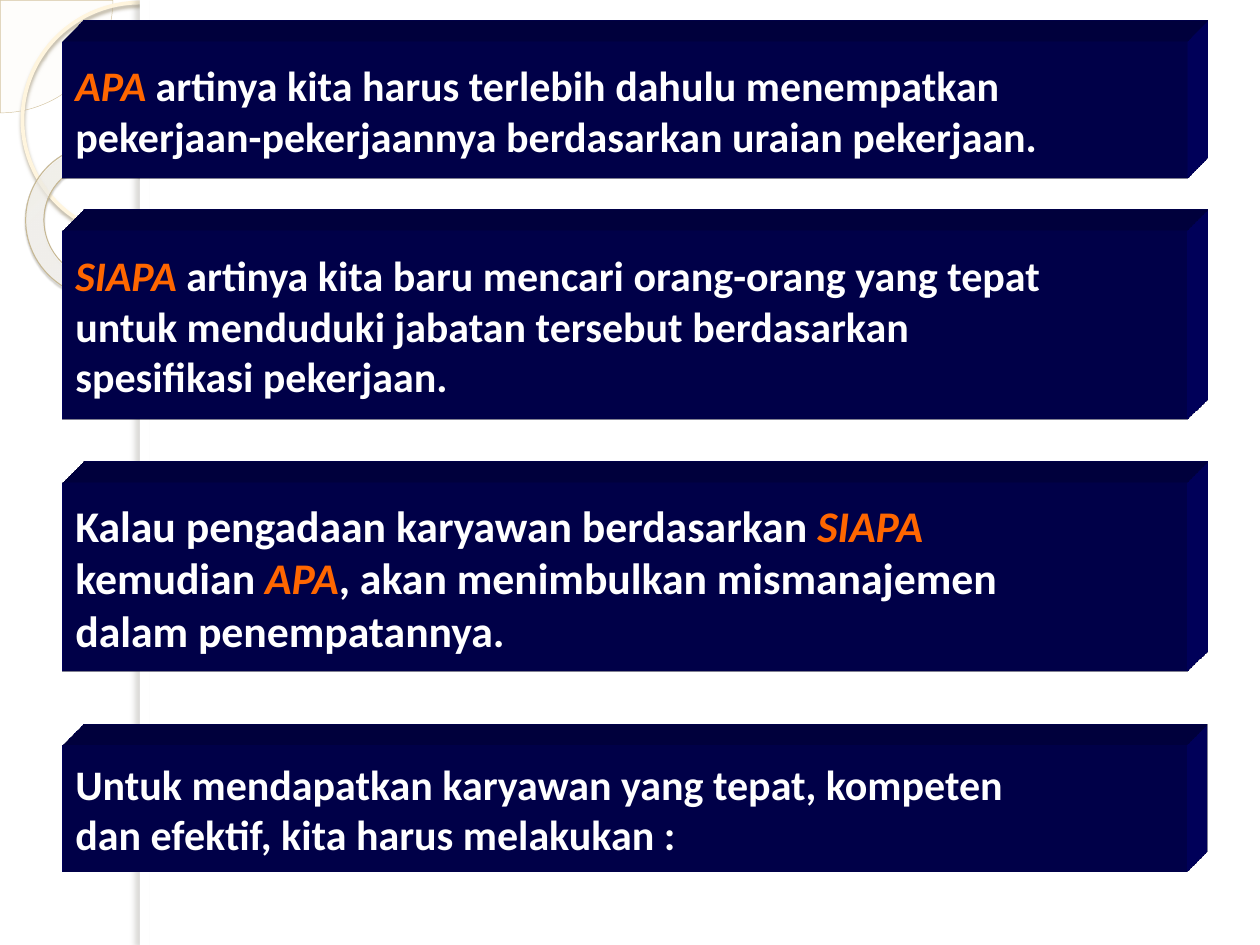
from dataclasses import dataclass
from typing import Optional

from pptx import Presentation
from pptx.dml.color import RGBColor
from pptx.enum.shapes import MSO_SHAPE
from pptx.enum.text import MSO_ANCHOR, PP_ALIGN
from pptx.oxml import parse_xml
from pptx.oxml.ns import nsdecls, qn
from pptx.util import Pt

RECT = MSO_SHAPE.RECTANGLE
OVAL = MSO_SHAPE.OVAL
DONUT = MSO_SHAPE.DONUT
PIE = MSO_SHAPE.PIE
MIDDLE = MSO_ANCHOR.MIDDLE
LEFT = PP_ALIGN.LEFT

WHITE = RGBColor(0xFF, 0xFF, 0xFF)
NAVY = RGBColor(0x00, 0x00, 0x66)
ORANGE = RGBColor(0xFF, 0x66, 0x00)
CREAM = RGBColor(0xFE, 0xFA, 0xF4)
SAND = RGBColor(0xD3, 0xC3, 0x9F)
PALE = RGBColor(0xFF, 0xF5, 0xDE)
TAN = RGBColor(0xC7, 0xB8, 0x93)
SHADE = RGBColor(0xB0, 0xA6, 0x8F)
DARK = RGBColor(0x5A, 0x54, 0x44)
GREY = RGBColor(0x73, 0x6F, 0x63)
STOPS = (
    (0, RGBColor(0xFF, 0xFC, 0xF6), 70),
    (70, RGBColor(0xFF, 0xFE, 0xFB), 55),
    (100, RGBColor(0xF0, 0xD2, 0x8E), 60),
)
FONT = "Calibri"
KEYS = ("SIAPA", "APA")


@dataclass(frozen=True)
class Shadow:
    """Outer shadow with lengths in points."""
    color: RGBColor
    alpha: int
    blur: float
    dist: float
    angle: int


@dataclass(frozen=True)
class Decor:
    """One ornament at the left edge, in points."""
    kind: int
    box: tuple
    fill: Optional[RGBColor] = None
    alpha: int = 100
    line: Optional[RGBColor] = None
    width: float = 0
    shadow: Optional[Shadow] = None
    adjust: tuple = ()
    turn: float = 0
    stops: tuple = ()


@dataclass(frozen=True)
class Panel:
    """One raised bar of text, in points."""
    top: float
    height: float
    lines: tuple
    size: float = 24


DECOR = (
    Decor(PIE, (-64, -64, 128.5, 128.5), CREAM, 33, SAND, 0.25, adjust=(0, 54.02)),
    Decor(OVAL, (12.8, 1.5, 134, 134), line=PALE, width=2.15,
          shadow=Shadow(SHADE, 85, 2, 2, 90)),
    Decor(DONUT, (14.4, 83, 88.5, 87), line=TAN, width=0.58, adjust=(0.12,),
          turn=38.6, stops=STOPS, shadow=Shadow(DARK, 35, 1, 1.2, 75)),
    Decor(RECT, (80, 0, 640, 540), WHITE),
    Decor(RECT, (80, 0, 5.5, 540), WHITE, shadow=Shadow(GREY, 25, 3, 3, 180)),
)

PANELS = (
    Panel(24, 78, ("APA artinya kita harus terlebih dahulu menempatkan",
                   "pekerjaan-pekerjaannya berdasarkan uraian pekerjaan.")),
    Panel(132, 108, ("SIAPA artinya kita baru mencari orang-orang yang tepat",
                     "untuk menduduki jabatan tersebut berdasarkan",
                     "spesifikasi pekerjaan.")),
    Panel(276, 108, ("Kalau pengadaan karyawan berdasarkan SIAPA",
                     "kemudian APA, akan menimbulkan mismanajemen",
                     "dalam penempatannya."), 25),
    Panel(426, 72, ("Untuk mendapatkan karyawan yang tepat, kompeten",
                    "dan efektif, kita harus melakukan :")),
)


def tint(color: RGBColor, alpha: int) -> str:
    """Return a colour with opacity as XML."""
    return f'<a:srgbClr val="{color}"><a:alpha val="{alpha * 1000}"/></a:srgbClr>'


def node(xml: str):
    """Build a drawing element, adding the namespace to its root tag."""
    tag, rest = xml.split(" ", 1)
    return parse_xml(f"{tag} {nsdecls('a')} {rest}")


def cast(shape, shade: Shadow) -> None:
    """Give a shape an outer shadow."""
    effects = shape._element.spPr.find(qn("a:effectLst"))
    effects.append(node(
        f'<a:outerShdw blurRad="{Pt(shade.blur)}" dist="{Pt(shade.dist)}" '
        f'dir="{shade.angle * 60000}" algn="tl" rotWithShape="0">'
        f'{tint(shade.color, shade.alpha)}</a:outerShdw>'))


def blend(shape, stops: tuple) -> None:
    """Fill a shape with a round gradient."""
    shape.fill.gradient()
    props = shape._element.spPr
    parts = "".join(f'<a:gs pos="{pos * 1000}">{tint(color, alpha)}</a:gs>'
                    for pos, color, alpha in stops)
    props.replace(props.find(qn("a:gradFill")), node(
        f'<a:gradFill rotWithShape="1"><a:gsLst>{parts}</a:gsLst><a:path path="circle">'
        '<a:fillToRect l="-408000" t="-50000" r="508000" b="150000"/>'
        '</a:path></a:gradFill>'))


def extrude(shape, color: RGBColor) -> None:
    """Raise a shape into an oblique block."""
    props = shape._element.spPr
    props.append(node(
        '<a:scene3d ><a:camera prst="legacyObliqueTopRight"/>'
        '<a:lightRig rig="legacyFlat3" dir="b"/></a:scene3d>'))
    props.append(node(
        '<a:sp3d extrusionH="430200" prstMaterial="legacyMatte">'
        '<a:bevelT w="13500" h="13500" prst="angle"/>'
        '<a:bevelB w="13500" h="13500" prst="angle"/>'
        f'<a:extrusionClr><a:srgbClr val="{color}"/></a:extrusionClr></a:sp3d>'))


def draw(slide, item: Decor):
    """Draw one shape."""
    shape = slide.shapes.add_shape(item.kind, *map(Pt, item.box))
    shape.shadow.inherit = False
    shape.rotation = item.turn
    for index, value in enumerate(item.adjust):
        shape.adjustments[index] = value
    if item.stops:
        blend(shape, item.stops)
    elif item.fill is None:
        shape.fill.background()
    else:
        shape.fill.solid()
        shape.fill.fore_color.rgb = item.fill
        if item.alpha < 100:
            color = shape._element.spPr.find(".//" + qn("a:srgbClr"))
            color.append(node(f'<a:alpha val="{item.alpha * 1000}"/>'))
    if item.line is None:
        shape.line.fill.background()
    else:
        shape.line.color.rgb = item.line
        shape.line.width = Pt(item.width)
    if item.shadow:
        cast(shape, item.shadow)
    return shape


def write(para, text: str, *, size: float, color: RGBColor = WHITE,
          bold: bool = True, italic: bool = False) -> None:
    """Add a formatted run to a paragraph."""
    run = para.add_run()
    run.text = text
    font = run.font
    font.name, font.size, font.bold, font.italic = FONT, Pt(size), bold, italic
    font.color.rgb = color


def fill(para, line: str, size: float) -> None:
    """Write a line with its key word in orange italics."""
    key = next((word for word in KEYS if word in line), None)
    if key is None:
        write(para, line, size=size)
        return
    before, _, after = line.partition(key)
    if before:
        write(para, before, size=size)
    write(para, key, size=size, color=ORANGE, italic=True)
    if after:
        write(para, after, size=size)


def block(slide, panel: Panel) -> None:
    """Draw one raised bar with its text."""
    shape = draw(slide, Decor(RECT, (36, panel.top, 642, panel.height), NAVY))
    extrude(shape, NAVY)
    frame = shape.text_frame
    frame.word_wrap = True
    frame.vertical_anchor = MIDDLE
    for index, line in enumerate(panel.lines):
        para = frame.add_paragraph() if index else frame.paragraphs[0]
        para.alignment = LEFT
        fill(para, line, panel.size)


def main() -> None:
    """Build and save the slide."""
    deck = Presentation()
    deck.slide_width, deck.slide_height = Pt(720), Pt(540)
    slide = deck.slides.add_slide(deck.slide_layouts[6])
    for item in DECOR:
        draw(slide, item)
    for panel in PANELS:
        block(slide, panel)
    deck.save("out.pptx")


if __name__ == "__main__":
    main()
